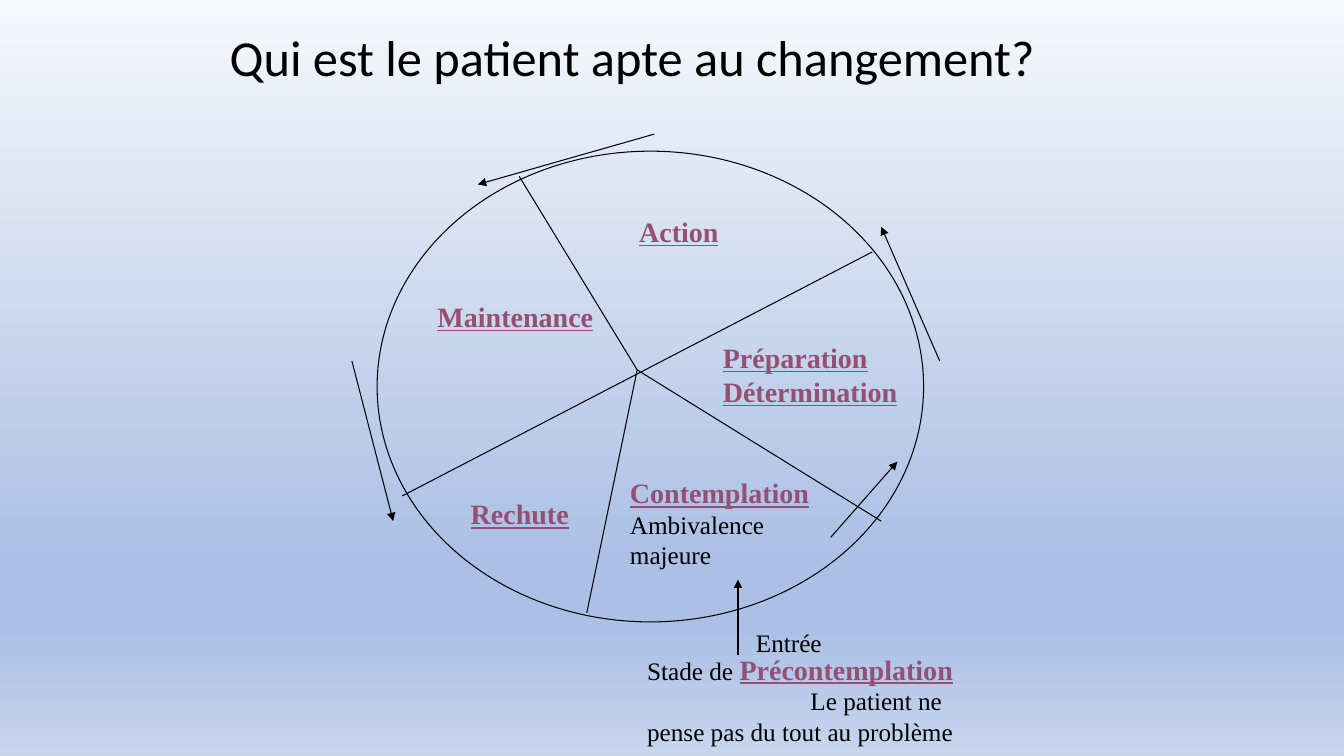
from copy import deepcopy
from dataclasses import dataclass

from lxml import etree
from pptx import Presentation
from pptx import util as u
from pptx.dml.color import RGBColor
from pptx.enum import shapes, text
from pptx.oxml import ns


@dataclass(frozen=True)
class Theme:
    """Colours, fonts and type sizes."""
    ink: str = "000000"
    stage: str = "954F72"
    sky: tuple = ((0, "F6F8FC"), (74, "ABC0E4"), (83, "ABC0E4"), (100, "C7D5ED"))
    head: str = "Calibri"
    body: str = "Times New Roman"
    title: int = 36
    label: int = 20
    note: int = 18
    line: float = 0.75


T = Theme()


def color(code):
    """Turn a hex code into a colour."""
    return RGBColor.from_string(code)


def write(slide, box, *paras, size=T.note, font=T.body, ink=T.ink, strong=False,
          anchor=text.MSO_ANCHOR.TOP, space=1.0, indent=0):
    """Place paragraphs of text or (text, format) runs; indent the last first line."""
    frame = slide.shapes.add_textbox(*map(u.Inches, box)).text_frame
    frame.word_wrap = True
    frame.vertical_anchor = anchor
    for i, para in enumerate(paras):
        p = frame.paragraphs[0] if i == 0 else frame.add_paragraph()
        p.line_spacing = space
        for words, form in [(para, {})] if isinstance(para, str) else para:
            run = p.add_run()
            run.text = words
            bold = form.get("strong", strong)
            run.font.name = font
            run.font.size = u.Pt(form.get("size", size))
            run.font.bold = run.font.underline = bold
            run.font.color.rgb = color(form.get("ink", ink))
    if indent:
        p._p.get_or_add_pPr().set("indent", str(u.Inches(indent)))


def rule(slide, start, end, arrow=False):
    """Draw a thin line, with an arrowhead at its end if asked."""
    line = slide.shapes.add_connector(
        shapes.MSO_CONNECTOR.STRAIGHT, *map(u.Inches, (*start, *end)))
    line.line.color.rgb = color(T.ink)
    line.line.width = u.Pt(T.line)
    if arrow:
        etree.SubElement(line.line._get_or_add_ln(), ns.qn("a:tailEnd"), type="triangle")
    etree.SubElement(line._element.spPr, ns.qn("a:effectLst"))


def backdrop(slide):
    """Fill the background with the vertical gradient."""
    fill = slide.background.fill
    fill.gradient()
    fill.gradient_angle = 270
    stops = fill._fill._gradFill.gsLst
    while len(stops) < len(T.sky):
        stops.append(deepcopy(stops[0]))
    for stop, (pos, code) in zip(fill.gradient_stops, T.sky):
        stop.color.rgb = color(code)
        stop.position = pos / 100


def title(slide, box):
    """Write the title."""
    write(slide, box, "Qui est le patient apte au changement?", size=T.title,
          font=T.head, anchor=text.MSO_ANCHOR.MIDDLE, space=0.9)


def wheel(slide, box):
    """Draw the wheel of stages with its spokes, labels and arrows."""
    left, top, _, _ = box

    def at(x, y):
        return left + x, top + y

    disc = slide.shapes.add_shape(shapes.MSO_SHAPE.OVAL, *map(u.Inches, box))
    disc.shadow.inherit = False
    disc.fill.background()
    disc.line.color.rgb = color(T.ink)
    disc.line.width = u.Pt(T.line)

    hub = at(2.58, 2.17)
    rule(slide, at(0.25, 3.42), at(4.91, 1))
    for rim in ((1.41, 0.25), (2.08, 4.58), (5, 3.67)):
        rule(slide, hub, at(*rim))

    turns = (((2.75, -0.17), (1, 0.33)), ((-0.25, 2.08), (0.16, 3.67)),
             ((5.58, 2.08), (5, 0.75)), ((4.5, 3.83), (5.16, 3.08)))
    for start, end in turns:
        rule(slide, at(*start), at(*end), arrow=True)

    stages = (("Action", 2.5, 0.58, 1.42, 0.44),
              ("Préparation Détermination", 3.33, 1.83, 2.08, 0.77),
              ("Contemplation", 2.41, 3.17, 2, 0.44),
              ("Rechute", 0.83, 3.38, 1.42, 0.44),
              ("Maintenance", 0.5, 1.42, 1.75, 0.44))
    for name, x, y, w, h in stages:
        write(slide, (*at(x, y), w, h), name, size=T.label, ink=T.stage, strong=True)
    write(slide, (*at(2.41, 3.5), 1.83, 0.71), "Ambivalence majeure")


def entry(slide, box):
    """Show the way into the wheel and the stage before it."""
    left, top, width, height = box
    rule(slide, (left + 1, top + 0.75), (left + 1, top), arrow=True)
    write(slide, (left + 1.08, top + 0.42, 1, 0.4), "Entrée")
    stage = dict(size=T.label, ink=T.stage, strong=True)
    write(slide, (left, top + 0.67, width, height - 0.67),
          [("Stade de ", {}), ("Précontemplation", stage)],
          "Le patient ne pense pas du tout au problème", indent=1.62)


def main():
    """Build and save the slide."""
    deck = Presentation()
    deck.slide_width, deck.slide_height = u.Inches(13.33), u.Inches(7.5)
    slide = deck.slides.add_slide(deck.slide_layouts[6])
    backdrop(slide)
    title(slide, (2.18, -0.03, 9, 1.25))
    wheel(slide, (3.74, 1.5, 5.42, 4.67))
    entry(slide, (6.32, 5.75, 3.42, 1.71))
    deck.save("out.pptx")


if __name__ == "__main__":
    main()
